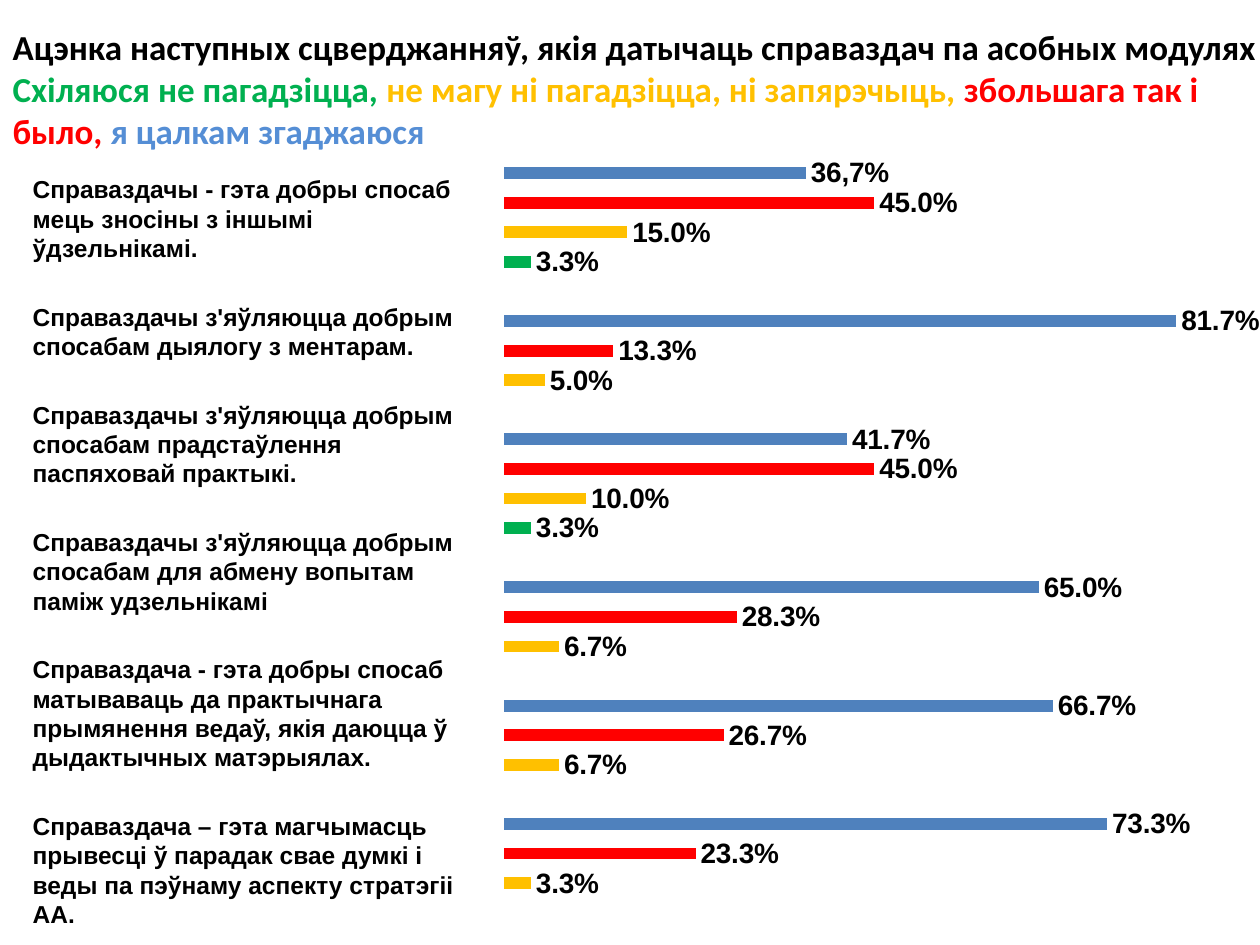
from lxml import etree
from pptx import Presentation
from pptx.chart.data import CategoryChartData
from pptx.dml.color import RGBColor
from pptx.enum.chart import XL_CHART_TYPE, XL_LABEL_POSITION
from pptx.enum.text import MSO_ANCHOR, MSO_AUTO_SIZE, PP_ALIGN
from pptx.oxml import parse_xml
from pptx.oxml.ns import nsdecls, qn
from pptx.util import Pt

BAR = XL_CHART_TYPE.BAR_CLUSTERED
OUTSIDE_END = XL_LABEL_POSITION.OUTSIDE_END
PX = 914400 // 126

COLORS = {
    "text": "000000", "disagree": "00B050", "neutral": "FFC000",
    "mostly": "FF0000", "agree": "4F81BD", "agree_title": "558ED5",
}
TITLE = "Ацэнка наступных сцверджанняў, якія датычаць справаздач па асобных модулях"
LEGEND = [
    ("Схіляюся не пагадзіцца, ", "disagree"),
    ("не магу ні пагадзіцца, ні запярэчыць, ", "neutral"),
    ("збольшага так і было, ", "mostly"),
    ("я цалкам згаджаюся", "agree_title"),
]
ANSWERS = ["agree", "mostly", "neutral", "disagree"]
# Each statement with its shares in the order of ANSWERS
STATEMENTS = [
    ("Справаздачы - гэта добры спосаб мець зносіны з іншымі ўдзельнікамі.",
     [0.367, 0.45, 0.15, 0.033]),
    ("Справаздачы з'яўляюцца добрым спосабам дыялогу з ментарам.",
     [0.817, 0.133, 0.05]),
    ("Справаздачы з'яўляюцца добрым спосабам прадстаўлення паспяховай практыкі.",
     [0.417, 0.45, 0.1, 0.033]),
    ("Справаздачы з'яўляюцца добрым спосабам для абмену вопытам паміж удзельнікамі",
     [0.65, 0.283, 0.067]),
    ("Справаздача - гэта добры спосаб матываваць да практычнага прымянення ведаў, "
     "якія даюцца ў дыдактычных матэрыялах.",
     [0.667, 0.267, 0.067]),
    ("Справаздача – гэта магчымасць прывесці ў парадак свае думкі і веды "
     "па пэўнаму аспекту стратэгіі АА.",
     [0.733, 0.233, 0.033]),
]
FIRST_LABEL = "36,7%"
PLOT = {"x": 0.027, "y": 0.015, "w": 0.955, "h": 0.976}


def style(font, name, size, color="text"):
    font.name = name
    font.size = Pt(size)
    font.bold = True
    font.color.rgb = RGBColor.from_string(COLORS[color])


def place(shape, left, top, width, height):
    shape.left, shape.top = left * PX, top * PX
    shape.width, shape.height = width * PX, height * PX


def add_title(slide):
    title = slide.shapes.title
    place(title, 0, 0, 1289, 158)
    frame = title.text_frame
    frame.auto_size = MSO_AUTO_SIZE.NONE
    frame.vertical_anchor = MSO_ANCHOR.BOTTOM
    frame.text = TITLE
    paragraph = frame.paragraphs[0]
    paragraph.alignment = PP_ALIGN.LEFT
    style(paragraph.runs[0].font, "Calibri", 20)
    paragraph.add_line_break()
    for text, color in LEGEND:
        run = paragraph.add_run()
        run.text = text
        style(run.font, "Calibri", 20, color)


def add_statements(slide):
    body = slide.placeholders[1]
    place(body, 20, 168, 462, 777)
    frame = body.text_frame
    frame.auto_size = MSO_AUTO_SIZE.NONE
    frame.text = "\n".join(text for text, shares in STATEMENTS)
    for index, paragraph in enumerate(frame.paragraphs):
        paragraph.line_spacing = Pt(16.75)
        paragraph.space_before = Pt(22.5 if index else 0)
        properties = paragraph._p.get_or_add_pPr()
        properties.set("marL", "0")
        properties.set("indent", "0")
        etree.SubElement(properties, qn("a:buNone"))
        style(paragraph.runs[0].font, "Arial", 14)


def set_plot_layout(chart):
    """Fix the inner plot area as fractions of the chart frame."""
    plot_area = chart._chartSpace.chart.plotArea
    for old in plot_area.findall(qn("c:layout")):
        plot_area.remove(old)
    modes = "".join(f'<c:{side}Mode val="edge"/>' for side in "xy")
    sizes = "".join(f'<c:{side} val="{value}"/>' for side, value in PLOT.items())
    plot_area.insert(0, parse_xml(
        f'<c:layout {nsdecls("c")}><c:manualLayout><c:layoutTarget val="inner"/>'
        f"{modes}{sizes}</c:manualLayout></c:layout>"))


def add_answer_chart(slide):
    bars = []  # bottom to top, with an empty slot between statements
    for text, shares in reversed(STATEMENTS):
        if bars:
            bars.append((None, None))
        bars += reversed(list(zip(ANSWERS, shares)))

    data = CategoryChartData(number_format="0.0%")
    data.categories = [str(number + 1) for number in range(len(bars))]
    data.add_series("Series 1", [share for answer, share in bars])
    chart = slide.shapes.add_chart(
        BAR, 483 * PX, 147 * PX, 777 * PX, 758 * PX, data).chart
    chart.has_legend = False
    chart.has_title = False
    chart.font.name = "Calibri"
    chart.font.size = Pt(10)
    chart.value_axis.minimum_scale = 0
    chart.value_axis.maximum_scale = 0.9
    chart.value_axis.has_major_gridlines = False
    for axis in (chart.value_axis, chart.category_axis):
        axis.visible = False
    set_plot_layout(chart)

    plot = chart.plots[0]
    plot.vary_by_categories = False
    plot.gap_width = 150
    series = plot.series[0]
    series.format.fill.solid()
    series.format.fill.fore_color.rgb = RGBColor.from_string(COLORS["agree"])
    for index, (answer, share) in enumerate(bars):
        if answer and answer != "agree":
            fill = series.points[index].format.fill
            fill.solid()
            fill.fore_color.rgb = RGBColor.from_string(COLORS[answer])

    labels = series.data_labels
    labels.show_value = True
    labels.number_format = "0.0%"
    labels.number_format_is_linked = False
    labels.position = OUTSIDE_END
    style(labels.font, "Arial", 16)
    first_label = series.points[len(bars) - 1].data_label
    first_label.text_frame.text = FIRST_LABEL
    style(first_label.text_frame.paragraphs[0].runs[0].font, "Arial", 16)
    first_label.position = OUTSIDE_END


def main():
    presentation = Presentation()
    presentation.slide_width = 1260 * PX
    presentation.slide_height = 945 * PX
    slide = presentation.slides.add_slide(presentation.slide_layouts[1])
    add_title(slide)
    add_statements(slide)
    add_answer_chart(slide)
    presentation.save("out.pptx")


if __name__ == "__main__":
    main()
